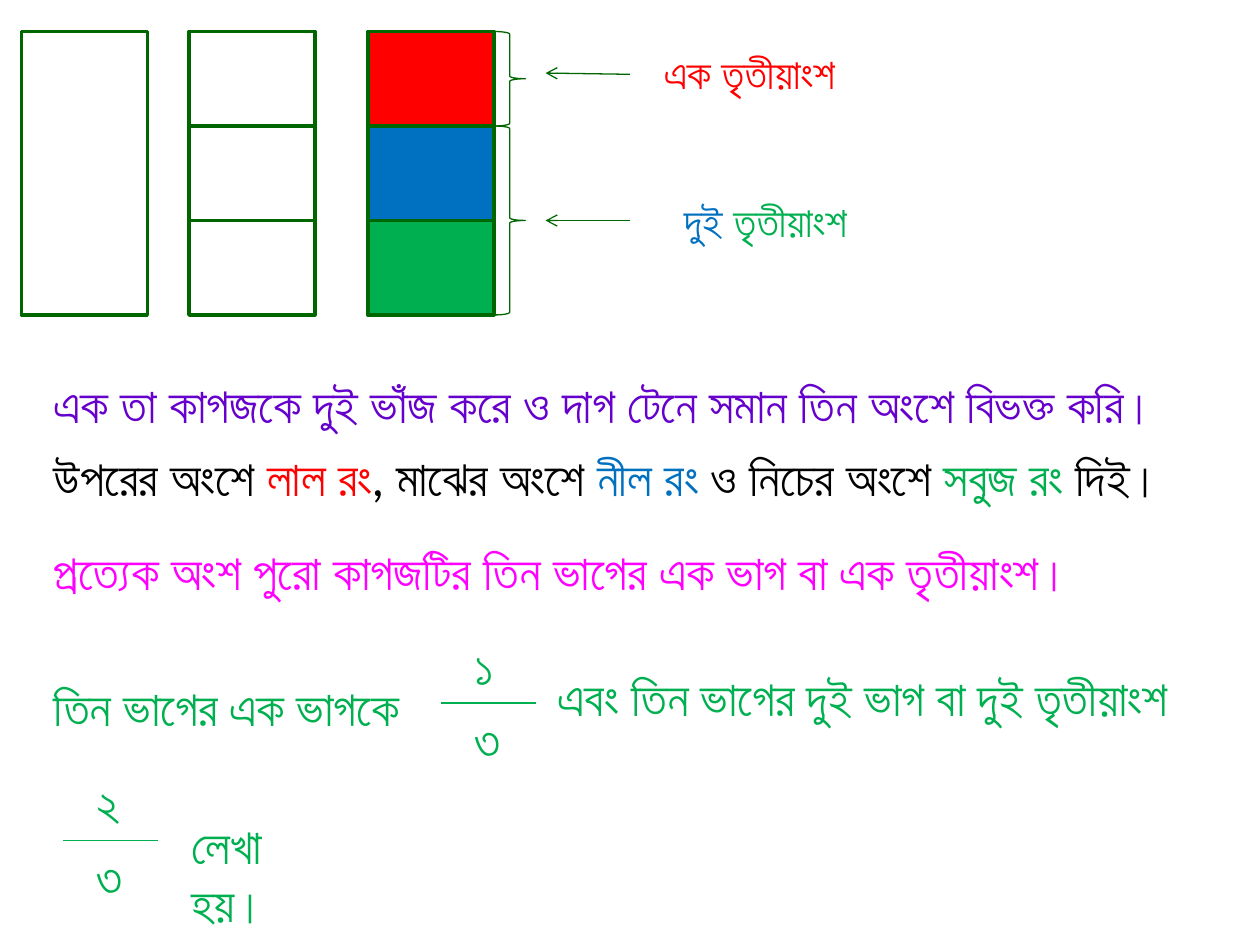
from dataclasses import dataclass

from lxml import etree
from pptx import Presentation
from pptx.dml.color import RGBColor
from pptx.enum.shapes import MSO_CONNECTOR, MSO_SHAPE
from pptx.enum.text import MSO_AUTO_SIZE
from pptx.oxml.ns import qn
from pptx.util import Inches, Pt

RECT, BRACE = MSO_SHAPE.RECTANGLE, MSO_SHAPE.RIGHT_BRACE
STRAIGHT = MSO_CONNECTOR.STRAIGHT
GROW = MSO_AUTO_SIZE.SHAPE_TO_FIT_TEXT

FONT = "Lato"
COLORS = {
    "white": "FFFFFF", "black": "000000", "outline": "006600",
    "red": "FF0000", "blue": "0070C0", "green": "00B050",
    "purple": "6600CC", "pink": "FF00FF",
}
TOP, PART_H, PART_W = 0.25, 0.75, 1


@dataclass
class Strip:
    left: float
    part_height: float
    fills: list[str]


@dataclass
class Label:
    left: float
    top: float
    width: float
    runs: list[tuple[str, str]]
    size: int = 28
    wrap: bool = False


@dataclass
class Fraction:
    left: float
    bar_y: float
    top: float
    numerator: str
    numerator_width: float
    denominator: str


STRIPS = [
    Strip(0.17, 3 * PART_H, ["white"]),
    Strip(1.5, PART_H, ["white"] * 3),
    Strip(2.92, PART_H, ["red", "blue", "green"]),
]
LABELS = [
    Label(5.17, 0.33, 1.65, [("এক তৃতীয়াংশ", "red")], 24),
    Label(5.33, 1.5, 1.58, [("দুই ", "blue"), ("তৃতীয়াংশ", "green")], 24),
    Label(0.33, 2.92, 9.16, [
        ("এক তা কাগজকে দুই ভাঁজ করে ও দাগ টেনে সমান তিন অংশে বিভক্ত করি।", "purple")]),
    Label(0.33, 3.5, 9.42, [
        ("উপরের অংশে ", "black"), ("লাল রং", "red"), (", মাঝের অংশে ", "black"),
        ("নীল রং ", "blue"), ("ও নিচের অংশে ", "black"), ("সবুজ রং ", "green"),
        ("দিই।", "black")]),
    Label(0.33, 4.25, 8.49, [
        ("প্রত্যেক অংশ পুরো কাগজটির তিন ভাগের এক ভাগ বা এক তৃতীয়াংশ।", "pink")]),
    Label(0.33, 5.33, 3.11, [("তিন ভাগের এক ভাগকে", "green")]),
    Label(4.33, 5.25, 5.37, [("এবং তিন ভাগের দুই ভাগ বা দুই তৃতীয়াংশ", "green")]),
    Label(1.42, 6.42, 1.3, [("লেখা হয়।", "green")], wrap=True),
]
FRACTIONS = [
    Fraction(3.5, 5.58, 5, "১", 0.36, "৩"),
    Fraction(0.5, 6.67, 6.08, "২", 0.38, "৩"),
]


def rgb(name: str) -> RGBColor:
    return RGBColor.from_string(COLORS[name])


def add_outlined(shapes, kind, left: float, top: float, width: float,
                 height: float, line_width: float, fill: str | None = None):
    s = shapes.add_shape(kind, Inches(left), Inches(top), Inches(width), Inches(height))
    s.shadow.inherit = False
    if fill:
        s.fill.solid()
        s.fill.fore_color.rgb = rgb(fill)
    else:
        s.fill.background()
    s.line.color.rgb = rgb("outline")
    s.line.width = Pt(line_width)


def add_line(shapes, x1: float, y1: float, x2: float, y2: float,
             color: str, arrow: bool = False):
    s = shapes.add_connector(STRAIGHT, Inches(x1), Inches(y1), Inches(x2), Inches(y2))
    s.line.color.rgb = rgb(color)
    s.line.width = Pt(0.75)
    if arrow:
        etree.SubElement(s.line._get_or_add_ln(), qn("a:tailEnd"), type="arrow")
    etree.SubElement(s._element.spPr, qn("a:effectLst"))


def add_label(shapes, label: Label):
    height = 0.5 if label.size == 24 else 0.57
    s = shapes.add_textbox(Inches(label.left), Inches(label.top),
                           Inches(label.width), Inches(height))
    tf = s.text_frame
    tf.word_wrap = label.wrap
    tf.auto_size = GROW
    for text, color in label.runs:
        r = tf.paragraphs[0].add_run()
        r.text = text
        r.font.name = FONT
        r.font.size = Pt(label.size)
        r.font.color.rgb = rgb(color)


def add_fraction(shapes, f: Fraction):
    group = shapes.add_group_shape().shapes
    x = f.left + 0.17
    add_label(group, Label(x, f.top, f.numerator_width, [(f.numerator, "green")]))
    add_line(group, f.left, f.bar_y, f.left + 0.75, f.bar_y, "green")
    add_label(group, Label(x, f.bar_y, 0.41, [(f.denominator, "green")]))


def main():
    prs = Presentation()
    prs.slide_width, prs.slide_height = Inches(10), Inches(7.5)
    shapes = prs.slides.add_slide(prs.slide_layouts[6]).shapes

    # Paper strips: whole, divided, coloured
    for strip in STRIPS:
        for i, fill in enumerate(strip.fills):
            add_outlined(shapes, RECT, strip.left, TOP + i * strip.part_height,
                         PART_W, strip.part_height, 2, fill)

    # Braces for one third and two thirds, with arrows from their labels
    brace_x = STRIPS[-1].left + PART_W
    for first, count, y1, y2 in [(0, 1, 0.59, 0.58), (1, 2, 1.75, 1.75)]:
        add_outlined(shapes, BRACE, brace_x, TOP + first * PART_H,
                     0.25, count * PART_H, 0.75)
        add_line(shapes, 5, y1, 4.33, y2, "outline", arrow=True)

    # Explanations and fractions
    for label in LABELS:
        add_label(shapes, label)
    for fraction in FRACTIONS:
        add_fraction(shapes, fraction)

    prs.save("out.pptx")


if __name__ == "__main__":
    main()
